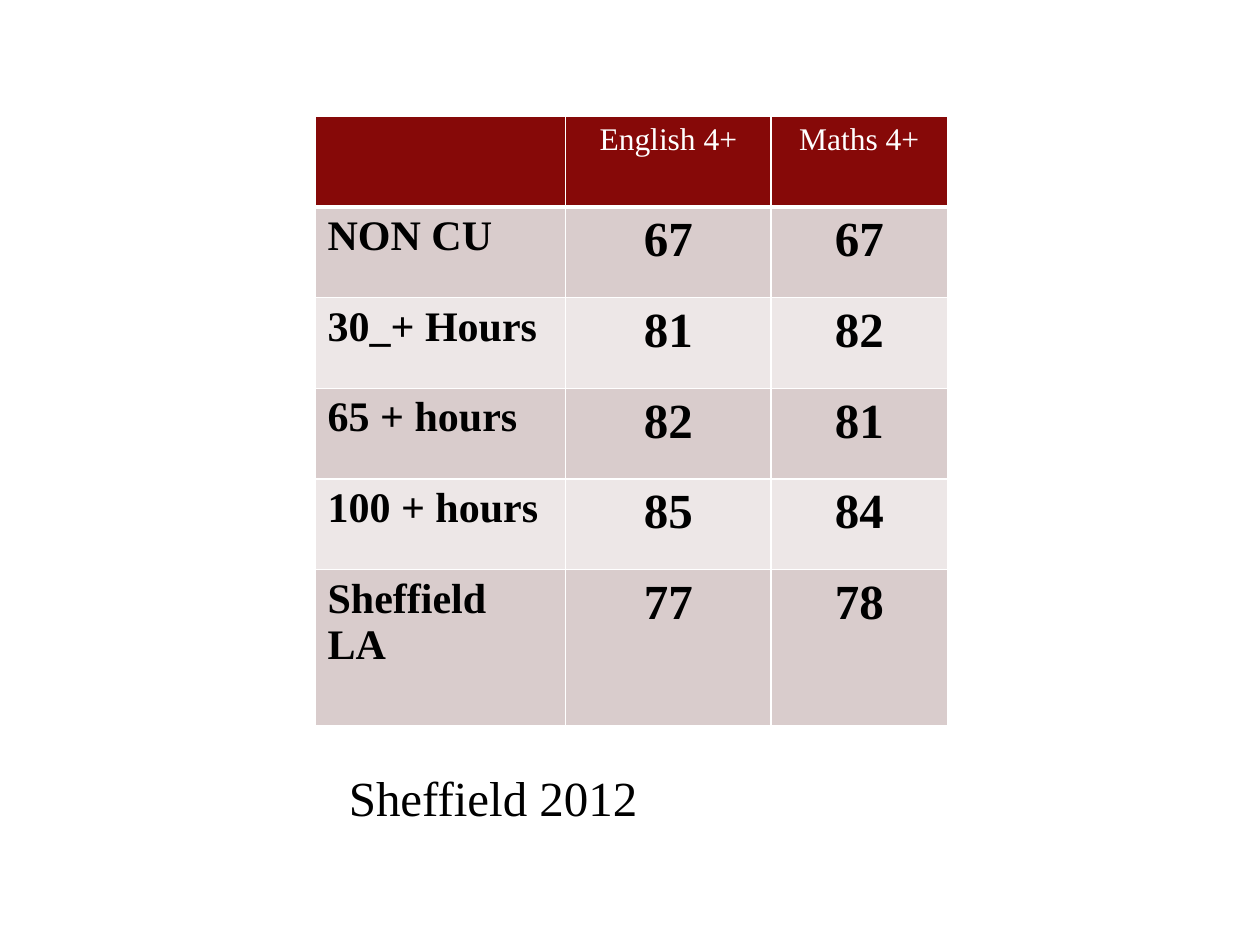
from typing import NamedTuple

from lxml import etree
from pptx import Presentation
from pptx.dml.color import RGBColor
from pptx.enum.text import MSO_AUTO_SIZE, PP_ALIGN
from pptx.oxml.ns import qn
from pptx.util import Inches, Pt

LEFT, CENTER = PP_ALIGN.LEFT, PP_ALIGN.CENTER
FIT_SHAPE = MSO_AUTO_SIZE.SHAPE_TO_FIT_TEXT

SLIDE_WIDTH, SLIDE_HEIGHT = Inches(10), Inches(7.5)
FONT = "Times New Roman"
WHITE, BLACK = "FFFFFF", "000000"
HEADER_FILL = "860908"
BAND_FILLS = ("D9CCCC", "EDE7E7")
COLUMN_WIDTHS = (1.99, 1.63, 1.4)
ROW_HEIGHT, LAST_ROW_HEIGHT = 0.72, 1.24
TABLE_LEFT, TABLE_TOP = 0.25, 0.123


class TextStyle(NamedTuple):
    size: int
    color: str = BLACK
    bold: bool = False
    align: PP_ALIGN = LEFT


class Result(NamedTuple):
    group: str
    english: int
    maths: int


HEADER = TextStyle(18, WHITE, align=CENTER)
GROUP = TextStyle(24, bold=True)
SCORE = TextStyle(28, bold=True, align=CENTER)
CAPTION = TextStyle(28)

HEADINGS = ("", "English 4+", "Maths 4+")
RESULTS = (
    Result("NON CU", 67, 67),
    Result("30_+ Hours", 81, 82),
    Result("65 + hours", 82, 81),
    Result("100 + hours", 85, 84),
    Result("Sheffield LA", 77, 78),
)


def rgb(color: str) -> RGBColor:
    return RGBColor.from_string(color)


def write(frame, text: str, style: TextStyle) -> None:
    frame.text = text
    paragraph = frame.paragraphs[0]
    paragraph.alignment = style.align
    for run in paragraph.runs:
        run.font.name = FONT
        run.font.size = Pt(style.size)
        run.font.bold = style.bold
        run.font.color.rgb = rgb(style.color)


def add_borders(cell, bottom_width: float) -> None:
    properties = cell._tc.get_or_add_tcPr()
    widths = {"a:lnL": 1, "a:lnR": 1, "a:lnT": 1, "a:lnB": bottom_width}
    for side, width in widths.items():
        line = etree.SubElement(properties, qn(side), w=str(Pt(width)))
        fill = etree.SubElement(line, qn("a:solidFill"))
        etree.SubElement(fill, qn("a:srgbClr"), val=WHITE)


def fill_cell(cell, text: str, style: TextStyle, fill: str, bottom_width: float = 1) -> None:
    write(cell.text_frame, text, style)
    add_borders(cell, bottom_width)
    cell.fill.solid()
    cell.fill.fore_color.rgb = rgb(fill)


def add_results_table(slide) -> None:
    heights = [ROW_HEIGHT] * len(RESULTS) + [LAST_ROW_HEIGHT]
    table = slide.shapes.add_table(
        len(heights), len(COLUMN_WIDTHS),
        int(SLIDE_WIDTH * TABLE_LEFT), int(SLIDE_HEIGHT * TABLE_TOP),
        Inches(sum(COLUMN_WIDTHS)), Inches(sum(heights)),
    ).table
    for column, width in zip(table.columns, COLUMN_WIDTHS):
        column.width = Inches(width)
    for row, height in zip(table.rows, heights):
        row.height = Inches(height)
    for column, heading in enumerate(HEADINGS):
        fill_cell(table.cell(0, column), heading, HEADER, HEADER_FILL, 3)
    for index, result in enumerate(RESULTS):
        band = BAND_FILLS[index % len(BAND_FILLS)]
        for column, value in enumerate(result):
            style = SCORE if column else GROUP
            fill_cell(table.cell(index + 1, column), str(value), style, band)


def add_caption(slide, text: str) -> None:
    caption = slide.shapes.add_textbox(Inches(2.67), Inches(6.04), Inches(3.68), Inches(0.57))
    caption.text_frame.word_wrap = True
    caption.text_frame.auto_size = FIT_SHAPE
    write(caption.text_frame, text, CAPTION)


def main() -> None:
    presentation = Presentation()
    presentation.slide_width, presentation.slide_height = SLIDE_WIDTH, SLIDE_HEIGHT
    slide = presentation.slides.add_slide(presentation.slide_layouts[6])
    add_results_table(slide)
    add_caption(slide, "Sheffield 2012")
    presentation.save("out.pptx")


if __name__ == "__main__":
    main()
